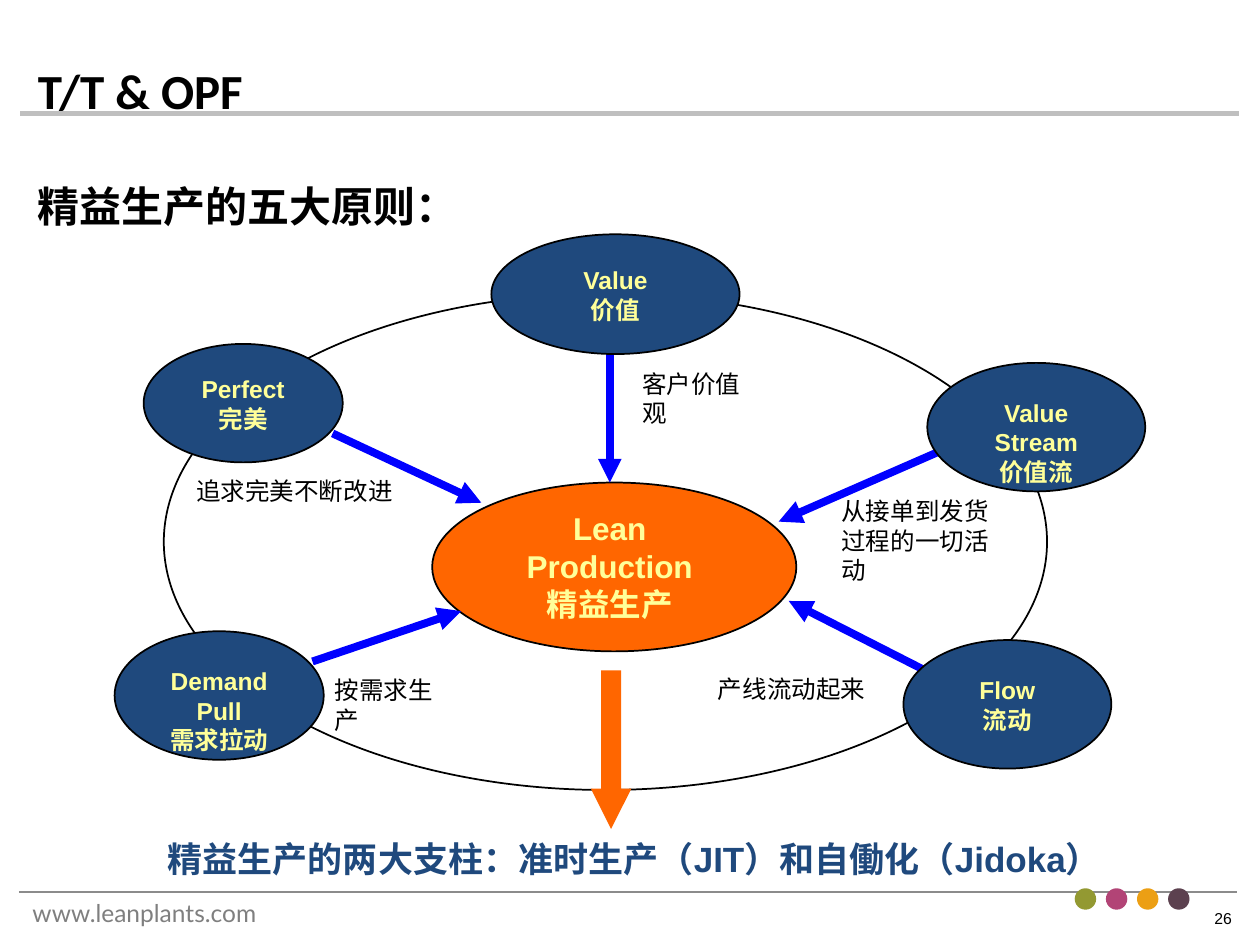
from dataclasses import dataclass

from lxml.etree import SubElement
from pptx import Presentation
from pptx.dml.color import RGBColor
from pptx.enum.shapes import MSO_CONNECTOR, MSO_SHAPE
from pptx.enum.text import MSO_ANCHOR, PP_ALIGN
from pptx.oxml.ns import qn
from pptx.util import Inches, Pt


@dataclass(frozen=True)
class Theme:
    ink: str = "000000"
    navy: str = "1F497D"
    blue: str = "0000FF"
    orange: str = "FF6600"
    cream: str = "FFFF99"
    rule: str = "BFBFBF"
    edge: str = "8B8B8B"
    site: str = "7F7F7F"
    dots: tuple = ("939932", "B24476", "EC9F14", "5C414F")
    head: int = 28
    lead: int = 24
    sum: int = 20
    hub: int = 18
    body: int = 14
    page: int = 9


@dataclass(frozen=True)
class Box:
    x: float
    y: float
    w: float
    h: float

    def sub(self, x, y, w, h):
        return Box(self.x + x, self.y + y, w, h)

    def mid(self, w, h):
        return self.sub((self.w - w) / 2, (self.h - h) / 2, w, h)

    def emu(self):
        return [cell(v) for v in (self.x, self.y, self.w, self.h)]


THEME = Theme()
COLS, ROWS = 100, 75

NODES = [
    (["Value", "价值"], (30, 0, 19.7, 9.5), False,
     ["客户价值观"], (41, 10.2, 11.7, 3.3), (39.4, 9.5, 39.4, 19.7)),
    (["Value Stream", "价值流"], (64.6, 10.2, 17.3, 10.2), False,
     ["从接单到发货", "过程的一切活动"], (56.8, 20.3, 15.6, 5.7), (65.4, 17.3, 52.8, 22.8)),
    (["Flow", "流动"], (62.7, 32.2, 16.5, 10.2), False,
     ["产线流动起来"], (47, 34.4, 13.7, 3.3), (64.6, 34.7, 53.6, 29.1)),
    (["Demand Pull", "需求拉动"], (0.1, 31.5, 16.6, 10.2), True,
     ["按需求生产"], (16.6, 34.5, 11.7, 3.3), (15.8, 33.9, 27.6, 29.9)),
    (["Perfect", "完美"], (2.4, 8.7, 15.8, 9.4), False,
     ["追求完美不断改进"], (5.6, 18.7, 17.6, 3.3), (17.4, 15.8, 29.2, 21.3)),
]


def cell(n):
    return Inches(n / 10)


def rgb(tint):
    return RGBColor.from_string(tint)


def write(slide, box, lines, size=THEME.body, tint=THEME.ink, font="Arial", bold=False,
          align=PP_ALIGN.LEFT, anchor=MSO_ANCHOR.TOP, wrap=True, space=None, shape=None):
    shape = shape or slide.shapes.add_textbox(*box.emu())
    shape.left, shape.top, shape.width, shape.height = box.emu()
    frame = shape.text_frame
    frame.word_wrap = wrap
    frame.vertical_anchor = anchor
    frame.text = "\n".join(lines)
    for par in frame.paragraphs:
        par.alignment = align
        par.line_spacing = space
        for run in par.runs:
            run.font.name = font
            run.font.size = Pt(size)
            run.font.bold = bold
            run.font.color.rgb = rgb(tint)


def draw(slide, kind, box, fill=None, line=None):
    shape = slide.shapes.add_shape(kind, *box.emu())
    shape.shadow.inherit = False
    if fill:
        shape.fill.solid()
        shape.fill.fore_color.rgb = rgb(fill)
    else:
        shape.fill.background()
    if line:
        shape.line.color.rgb = rgb(line)
        shape.line.width = Pt(1)
    else:
        shape.line.fill.background()
    return shape


def link(slide, ends, tint, width, arrow=False):
    line = slide.shapes.add_connector(MSO_CONNECTOR.STRAIGHT, *map(cell, ends))
    line.line.color.rgb = rgb(tint)
    line.line.width = Pt(width)
    if arrow:
        SubElement(line.line._get_or_add_ln(), qn("a:tailEnd"), type="triangle")
    SubElement(line._element.spPr, qn("a:effectLst"))


def header(slide, box):
    edge = box.y + box.h
    link(slide, (box.x, edge, box.x + box.w, edge), THEME.rule, 3)
    write(slide, box.sub(0.4, 0, 84.3, 5.5), ["T/T & OPF"], size=THEME.head,
          font="Calibri", bold=True, anchor=MSO_ANCHOR.MIDDLE, shape=slide.shapes.title)
    write(slide, box.sub(0.4, 9.4, 90.6, 5), ["精益生产的五大原则："],
          size=THEME.lead, bold=True)


def footer(slide, box):
    link(slide, (box.x, box.y, box.x + box.w, box.y), THEME.edge, 1)
    write(slide, box.sub(0.1, 0, 23.4, 3.4), ["www.leanplants.com"],
          tint=THEME.site, font="Lato")
    write(slide, box.sub(93.9, 0.8, 3.7, 2.7), ["26"], size=THEME.page, wrap=False)
    for i, tint in enumerate(THEME.dots):
        draw(slide, MSO_SHAPE.OVAL, box.sub(83.8 + 2.47 * i, -0.3, 1.7, 1.7), tint)


def center(slide, box):
    draw(slide, MSO_SHAPE.OVAL, box, THEME.orange, THEME.ink)
    write(slide, box.sub(2.3, 1.6, 23.6, 10), ["Lean", "Production", "精益生产"],
          size=THEME.hub, tint=THEME.cream, bold=True, align=PP_ALIGN.CENTER)


def node(slide, box, name, wrap):
    draw(slide, MSO_SHAPE.OVAL, box, THEME.navy, THEME.ink)
    write(slide, box.mid(13, 5.6), name, tint=THEME.cream, bold=True,
          align=PP_ALIGN.CENTER, wrap=wrap)


def wheel(slide, box):
    center(slide, box.sub(25.3, 19.7, 28.9, 13.4))
    for *_, (x1, y1, x2, y2) in NODES:
        ends = (box.x + x1, box.y + y1, box.x + x2, box.y + y2)
        link(slide, ends, THEME.blue, 4.5, arrow=True)
    draw(slide, MSO_SHAPE.OVAL, box.sub(4, 4.7, 70.1, 39.4), line=THEME.ink)
    for name, oval, wrap, note, spot, _ in NODES:
        node(slide, box.sub(*oval), name, wrap)
        write(slide, box.sub(*spot), note, wrap=False)
    down = draw(slide, MSO_SHAPE.DOWN_ARROW, box.sub(37.9, 34.6, 3.2, 12.6), THEME.orange)
    down.adjustments[1] = 1


def pillars(slide, box):
    write(slide, box, ["精益生产的两大支柱：准时生产（JIT）和自働化（Jidoka）"],
          size=THEME.sum, tint=THEME.navy, bold=True, align=PP_ALIGN.CENTER, space=0.8)


def main():
    deck = Presentation()
    deck.slide_width, deck.slide_height = cell(COLS), cell(ROWS)
    slide = deck.slides.add_slide(deck.slide_layouts[5])
    header(slide, Box(1.6, 4.4, 96.7, 4.6))
    footer(slide, Box(1.5, 70.8, 96.7, 3.4))
    wheel(slide, Box(9, 18.6, 82, 47.2))
    pillars(slide, Box(4.3, 66.6, 92.1, 3.7))
    deck.save("out.pptx")


if __name__ == "__main__":
    main()
